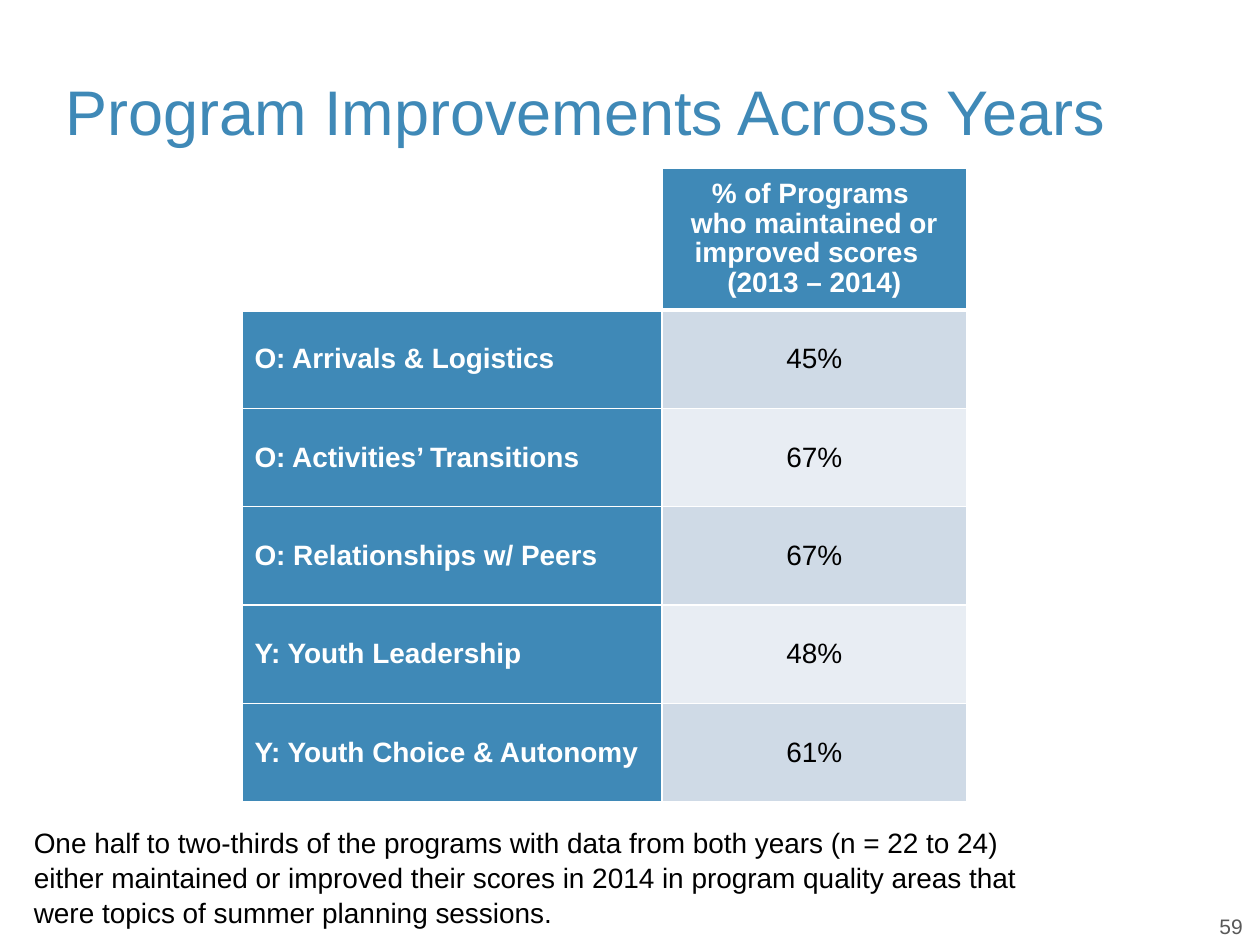
from lxml.etree import SubElement
from pptx import Presentation
from pptx.dml.color import RGBColor
from pptx.enum.text import MSO_ANCHOR, PP_ALIGN
from pptx.oxml.ns import qn
from pptx.util import Inches, Pt

WIDTH, HEIGHT = 10, 7.5
FONT = "Arial"
COLORS = {
    "blue": "3F89B7",
    "band_dark": "CFDAE6",
    "band_light": "E8EDF3",
    "white": "FFFFFF",
    "black": "000000",
    "gray": "595959",
}
HEADING = "% of Programs \nwho maintained or improved scores  \n(2013 – 2014)"
SCORES = [
    ("O: Arrivals & Logistics", "45%"),
    ("O: Activities’ Transitions", "67%"),
    ("O: Relationships w/ Peers", "67%"),
    ("Y: Youth Leadership", "48%"),
    ("Y: Youth Choice & Autonomy", "61%"),
]
FINDING = (
    "One half to two-thirds of the programs with data from both years (n = 22 to 24) "
    "either maintained or improved their scores in 2014 in program quality areas that "
    "were topics of summer planning sessions."
)


def share(left, top, width, height):
    return (
        Inches(left * WIDTH),
        Inches(top * HEIGHT),
        Inches(width * WIDTH),
        Inches(height * HEIGHT),
    )


def write(frame, text, size, color, bold=False, align=PP_ALIGN.LEFT, spacing=None):
    frame.text = text
    for paragraph in frame.paragraphs:
        paragraph.alignment = align
        paragraph.line_spacing = spacing
        for run in paragraph.runs:
            run.font.name = FONT
            run.font.size = Pt(size)
            run.font.bold = bold
            run.font.color.rgb = RGBColor.from_string(COLORS[color])


def add_text(slide, box, text, size, color, anchor=MSO_ANCHOR.TOP, spacing=None):
    frame = slide.shapes.add_textbox(*box).text_frame
    frame.word_wrap = True
    frame.vertical_anchor = anchor
    write(frame, text, size, color, spacing=spacing)


def set_borders(cell, top, bottom):
    properties = cell._tc.get_or_add_tcPr()
    widths = {"a:lnL": 1, "a:lnR": 1, "a:lnT": top, "a:lnB": bottom}
    for position, (side, points) in enumerate(widths.items()):
        line = SubElement(properties, qn(side), w=str(Pt(points)))
        fill = SubElement(line, qn("a:solidFill"))
        SubElement(fill, qn("a:srgbClr"), val=COLORS["white"])
        properties.insert(position, line)


def style_cell(cell, fill, top=1, bottom=1):
    cell.vertical_anchor = MSO_ANCHOR.MIDDLE
    cell.fill.solid()
    cell.fill.fore_color.rgb = RGBColor.from_string(COLORS[fill])
    set_borders(cell, top, bottom)


def add_scores(slide, box):
    left, top, width, height = box
    table = slide.shapes.add_table(len(SCORES) + 1, 2, *box).table
    table.columns[0].width = int(width * 0.58)
    table.columns[1].width = width - table.columns[0].width
    body_height = int(height * 0.162)
    for row in table.rows:
        row.height = body_height
    table.rows[0].height = height - body_height * len(SCORES)

    style_cell(table.cell(0, 0), "white", bottom=3)
    heading = table.cell(0, 1)
    write(heading.text_frame, HEADING, 16, "white", True, PP_ALIGN.CENTER, 0.96)
    style_cell(heading, "blue", bottom=3)

    for index, (area, score) in enumerate(SCORES, start=1):
        top_line = 3 if index == 1 else 1
        area_cell, score_cell = table.cell(index, 0), table.cell(index, 1)
        write(area_cell.text_frame, area, 16, "white", True)
        style_cell(area_cell, "blue", top_line)
        write(score_cell.text_frame, score, 16, "black", align=PP_ALIGN.CENTER)
        style_cell(score_cell, "band_dark" if index % 2 else "band_light", top_line)


def build_slide(slide):
    add_text(slide, share(0.042, 0.033, 0.9, 0.167),
             "Program Improvements Across Years", 36, "blue", MSO_ANCHOR.MIDDLE)
    add_scores(slide, share(0.192, 0.178, 0.575, 0.643))
    add_text(slide, share(0.017, 0.865, 0.842, 0.121), FINDING, 16, "black", spacing=1.05)
    add_text(slide, share(0.958, 0.96, 0.042, 0.04), "59", 12, "gray")


def main():
    deck = Presentation()
    deck.slide_width, deck.slide_height = Inches(WIDTH), Inches(HEIGHT)
    build_slide(deck.slides.add_slide(deck.slide_layouts[6]))
    deck.save("out.pptx")


if __name__ == "__main__":
    main()
